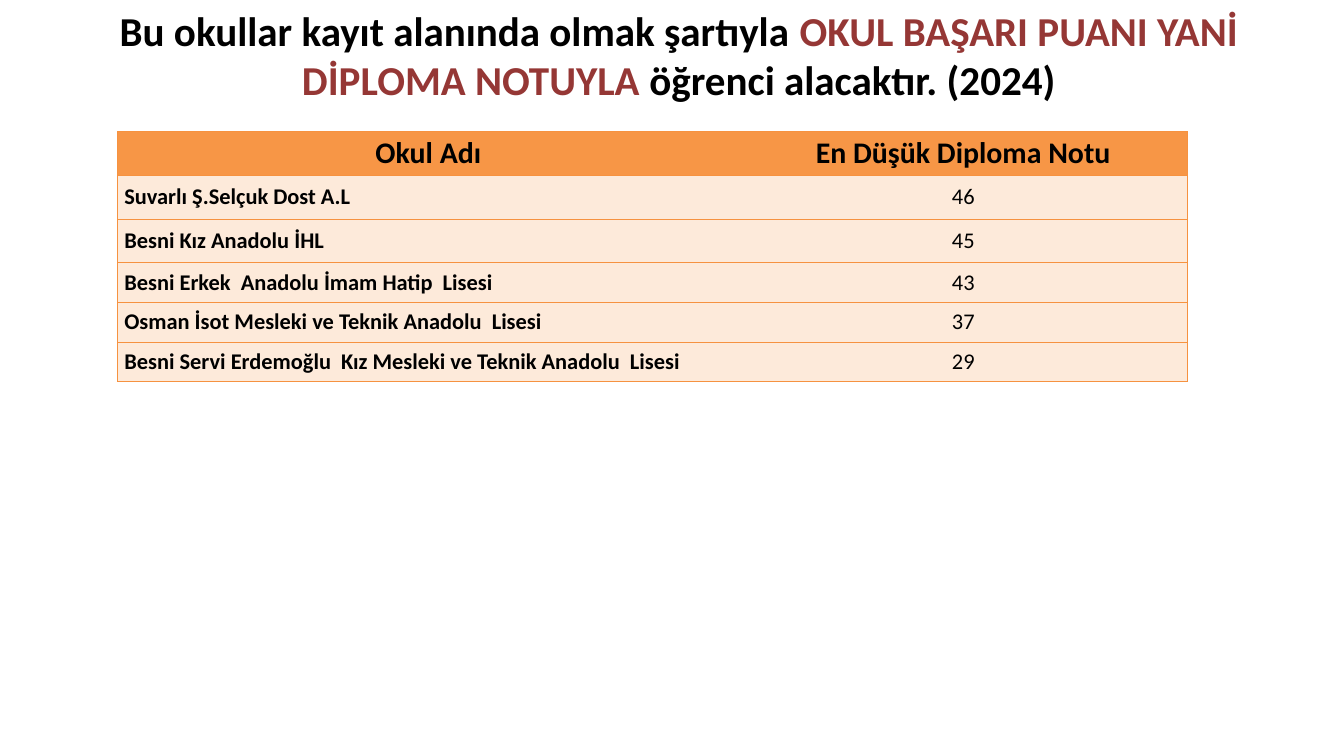
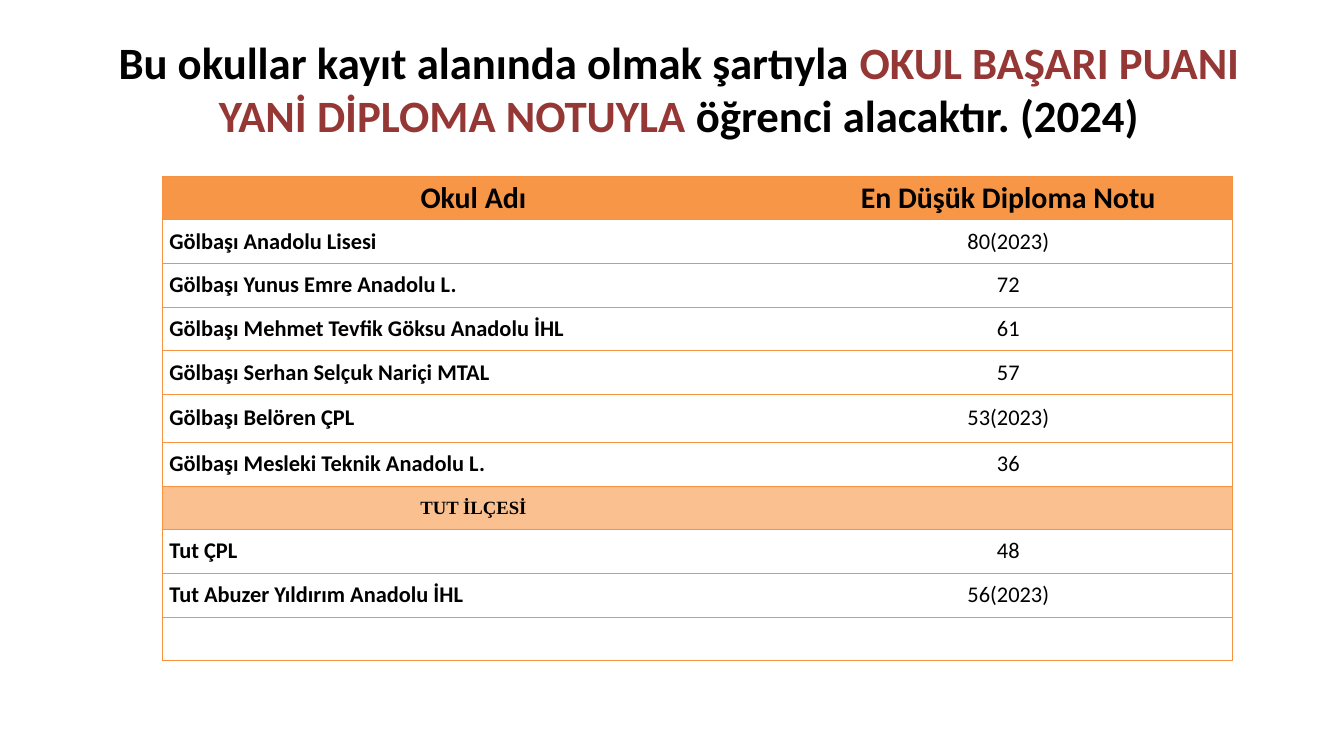
from lxml import etree
from pptx import Presentation
from pptx.dml.color import RGBColor
from pptx.enum.text import MSO_ANCHOR, MSO_AUTO_SIZE, PP_ALIGN
from pptx.oxml.ns import qn
from pptx.util import Pt

LEFT, MID = PP_ALIGN.LEFT, PP_ALIGN.CENTER
TOP, CENTER = MSO_ANCHOR.TOP, MSO_ANCHOR.MIDDLE
FIXED = MSO_AUTO_SIZE.NONE

PX = 9144  # 100 px to the inch

# Colours, fonts and type sizes
THEME = {
    "ink": "000000", "red": "953735", "line": "F69240",
    "head": "F79646", "peach": "FDEADA", "band": "FAC090", "white": "FFFFFF",
    "rule": 9525,
    "label": {"name": "Calibri", "size": Pt(32), "bold": True},
    "school": {"name": "Calibri", "size": Pt(24), "bold": True},
    "score": {"name": "Calibri", "size": Pt(24), "bold": False},
    "county": {"name": "Times New Roman", "size": Pt(20), "bold": True},
}

# Shared title and table wording
TITLE = [
    ("Bu okullar kayıt alanında olmak şartıyla ", "ink"),
    ("OKUL BAŞARI PUANI YANİ DİPLOMA NOTUYLA", "red"),
    (" öğrenci alacaktır. (2024)", "ink"),
]
HEAD = ("Okul Adı", "En Düşük Diploma Notu")
COLS = (925, 667)
COUNTY = "TUT İLÇESİ"

# One entry per slide; each row is school, score, height
PAGES = [
    {
        "title": (94, 3, 1833, 158), "size": 44,
        "table": (175, 196), "fill": "peach", "head": 65,
        "rows": [
            ("Suvarlı Ş.Selçuk Dost A.L", "46", 65),
            ("Besni Kız Anadolu İHL", "45", 65),
            ("Besni Erkek  Anadolu İmam Hatip  Lisesi", "43", 59),
            ("Osman İsot Mesleki ve Teknik Anadolu  Lisesi", "37", 59),
            ("Besni Servi Erdemoğlu  Kız Mesleki ve Teknik Anadolu  Lisesi", "29", 59),
        ],
    },
    {
        "title": (94, 46, 1833, 172), "size": 48,
        "table": (242, 262), "fill": "white", "head": 65,
        "rows": [
            ("Gölbaşı Anadolu Lisesi", "80(2023)", 65),
            ("Gölbaşı Yunus Emre Anadolu L.", "72", 65),
            ("Gölbaşı Mehmet Tevfik Göksu Anadolu İHL", "61", 65),
            ("Gölbaşı Serhan Selçuk Nariçi MTAL", "57", 65),
            ("Gölbaşı Belören ÇPL", "53(2023)", 71),
            ("Gölbaşı Mesleki Teknik Anadolu L.", "36", 65),
            (COUNTY, "", 65),
            ("Tut ÇPL", "48", 65),
            ("Tut Abuzer Yıldırım Anadolu İHL", "56(2023)", 65),
            ("", "", 65),
        ],
    },
]


def write(par, text, form, tone="ink"):
    """Add a run with the given font values."""
    run = par.add_run()
    run.text = text
    for key, val in form.items():
        setattr(run.font, key, val)
    run.font.color.rgb = RGBColor.from_string(THEME[tone])


def frame(cell, blank):
    """Rule all sides of a cell but the blank one."""
    props = cell._tc.get_or_add_tcPr()
    for side in ("lnL", "lnR", "lnT", "lnB"):
        line = etree.SubElement(props, qn("a:" + side), w=str(THEME["rule"]))
        if side == blank:
            etree.SubElement(line, qn("a:noFill"))
        else:
            fill = etree.SubElement(line, qn("a:solidFill"))
            etree.SubElement(fill, qn("a:srgbClr"), val=THEME["line"])


deck = Presentation()
deck.slide_width, deck.slide_height = 2000 * PX, 1125 * PX
plain = deck.slide_layouts.get_by_name("Title Only")

for page in PAGES:
    slide = deck.slides.add_slide(plain)

    # Title
    title = slide.shapes.title
    for key, val in zip(("left", "top", "width", "height"), page["title"]):
        setattr(title, key, val * PX)
    form = {"word_wrap": True, "auto_size": FIXED, "vertical_anchor": TOP}
    for key, val in form.items():
        setattr(title.text_frame, key, val)
    par = title.text_frame.paragraphs[0]
    par.alignment = MID
    for text, tone in TITLE:
        write(par, text, THEME["label"] | {"size": Pt(page["size"])}, tone)

    # Table grid
    rows = [(*HEAD, page["head"])] + page["rows"]
    left, top = page["table"]
    high = sum(row[2] for row in rows)
    grid = slide.shapes.add_table(
        len(rows), len(COLS), left * PX, top * PX, sum(COLS) * PX, high * PX
    ).table
    grid.first_row = grid.horz_banding = False
    for col, wide in zip(grid.columns, COLS):
        col.width = wide * PX

    # Table rows
    for r, (name, score, tall) in enumerate(rows):
        grid.rows[r].height = tall * PX
        if r == 0:
            tone, forms, sides = "head", ("label", "label"), (MID, MID)
        elif name == COUNTY:
            tone, forms, sides = "band", ("county", "score"), (MID, MID)
        else:
            tone, forms, sides = page["fill"], ("school", "score"), (LEFT, MID)
        for c, text in enumerate((name, score)):
            cell = grid.cell(r, c)
            frame(cell, ("lnR", "lnL")[c])
            cell.fill.solid()
            cell.fill.fore_color.rgb = RGBColor.from_string(THEME[tone])
            cell.vertical_anchor = CENTER
            par = cell.text_frame.paragraphs[0]
            par.alignment = sides[c]
            if text:
                write(par, text, THEME[forms[c]])

deck.save("out.pptx")
